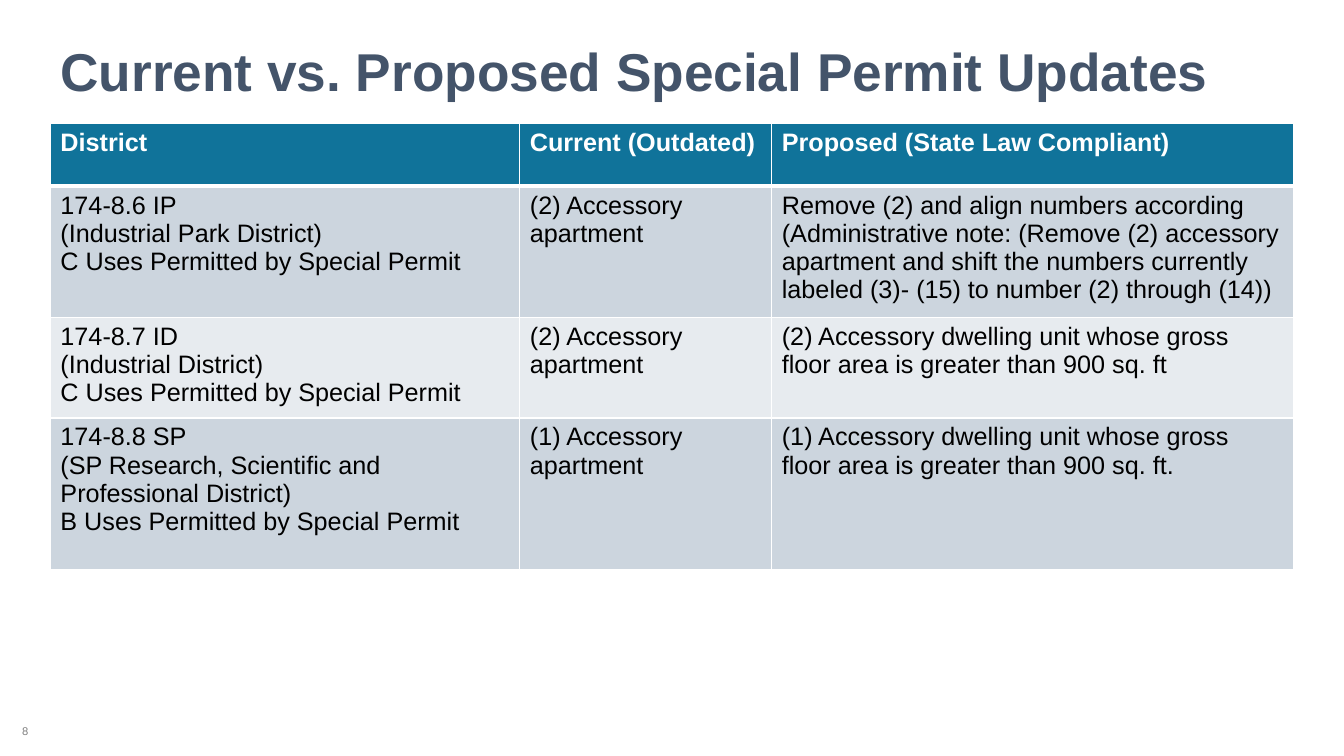
import pptx
import pptx.dml.color
import pptx.enum.text
import pptx.oxml
import pptx.oxml.ns
import pptx.util
from dataclasses import dataclass

Cm = pptx.util.Cm
PP_ALIGN = pptx.enum.text.PP_ALIGN
MIDDLE = pptx.enum.text.MSO_ANCHOR.MIDDLE

HEADLINE = "Current vs. Proposed Special Permit Updates"
PAGE_NUMBER = "8"
HEADINGS = ("District", "Current (Outdated)", "Proposed (State Law Compliant)")
DISTRICTS = [
    (
        "174-8.6 IP\n(Industrial Park District)\nC Uses Permitted by Special Permit",
        "(2) Accessory apartment",
        "Remove (2) and align numbers according\n"
        "(Administrative note: (Remove (2) accessory apartment and shift the "
        "numbers currently labeled (3)- (15) to number (2) through (14))",
    ),
    (
        "174-8.7 ID\n(Industrial District)\nC Uses Permitted by Special Permit",
        "(2) Accessory apartment",
        "(2) Accessory dwelling unit whose gross floor area is greater than 900 sq. ft",
    ),
    (
        "174-8.8 SP\n(SP Research, Scientific and Professional District)\n"
        "B Uses Permitted by Special Permit",
        "(1) Accessory apartment",
        "(1) Accessory dwelling unit whose gross floor area is greater than 900 sq. ft.",
    ),
]
COLUMN_WIDTHS = (11.83, 6.35, 13.15)
ROW_HEIGHTS = (1.57, 3.1, 2.4, 3.81)


@dataclass(frozen=True)
class Theme:
    font: str = "Arial"
    headline: str = "44546A"
    header: str = "10739A"
    bands: tuple = ("CCD5DE", "E7EBEF")
    white: str = "FFFFFF"
    black: str = "000000"
    gray: str = "808080"
    headline_size: int = 38
    table_size: int = 18
    number_size: int = 8


THEME = Theme()


def rgb(color):
    return pptx.dml.color.RGBColor.from_string(color)


def format_text(frame, size, color, bold=False, align=PP_ALIGN.LEFT):
    for paragraph in frame.paragraphs:
        paragraph.alignment = align
        font = paragraph.font
        font.name, font.size, font.bold = THEME.font, pptx.util.Pt(size), bold
        font.color.rgb = rgb(color)


def draw_borders(cell, widths):
    properties = cell._tc.get_or_add_tcPr()
    for index, (side, width) in enumerate(widths.items()):
        border = pptx.oxml.parse_xml(
            f'<a:ln{side} {pptx.oxml.ns.nsdecls("a")} w="{pptx.util.Pt(width)}">'
            f'<a:solidFill><a:srgbClr val="{THEME.white}"/></a:solidFill></a:ln{side}>'
        )
        properties.insert(index, border)


def add_headline(slide):
    headline = slide.shapes.title
    headline.left, headline.top = Cm(1.27), Cm(0.66)
    headline.width, headline.height = Cm(31.32), Cm(2.44)
    frame = headline.text_frame
    frame.text = HEADLINE
    frame.auto_size = pptx.enum.text.MSO_AUTO_SIZE.NONE
    frame.vertical_anchor = MIDDLE
    frame.paragraphs[0].line_spacing = 0.9
    format_text(frame, THEME.headline_size, THEME.headline, bold=True)


def add_page_number(slide):
    frame = slide.shapes.add_textbox(0, Cm(17.78), Cm(1.27), Cm(1.27)).text_frame
    frame.text = PAGE_NUMBER
    frame.word_wrap = True
    frame.vertical_anchor = MIDDLE
    format_text(frame, THEME.number_size, THEME.gray, align=PP_ALIGN.CENTER)


def add_permits(slide):
    rows = [HEADINGS, *DISTRICTS]
    permits = slide.shapes.add_table(
        len(rows), len(HEADINGS), Cm(1.27), Cm(3.12),
        Cm(sum(COLUMN_WIDTHS)), Cm(sum(ROW_HEIGHTS)),
    ).table
    for column, width in zip(permits.columns, COLUMN_WIDTHS):
        column.width = Cm(width)
    for r, (texts, height) in enumerate(zip(rows, ROW_HEIGHTS)):
        permits.rows[r].height = Cm(height)
        is_header = r == 0
        fill = THEME.header if is_header else THEME.bands[(r - 1) % 2]
        color = THEME.white if is_header else THEME.black
        borders = {"L": 1, "R": 1, "T": 3 if r == 1 else 1, "B": 3 if is_header else 1}
        for c, text in enumerate(texts):
            cell = permits.cell(r, c)
            cell.text = text
            cell.fill.solid()
            cell.fill.fore_color.rgb = rgb(fill)
            draw_borders(cell, borders)
            format_text(cell.text_frame, THEME.table_size, color, bold=is_header)


def main():
    deck = pptx.Presentation()
    deck.slide_width, deck.slide_height = Cm(33.87), Cm(19.05)
    slide = deck.slides.add_slide(deck.slide_layouts.get_by_name("Title Only"))
    add_headline(slide)
    add_page_number(slide)
    add_permits(slide)
    deck.save("out.pptx")


if __name__ == "__main__":
    main()
